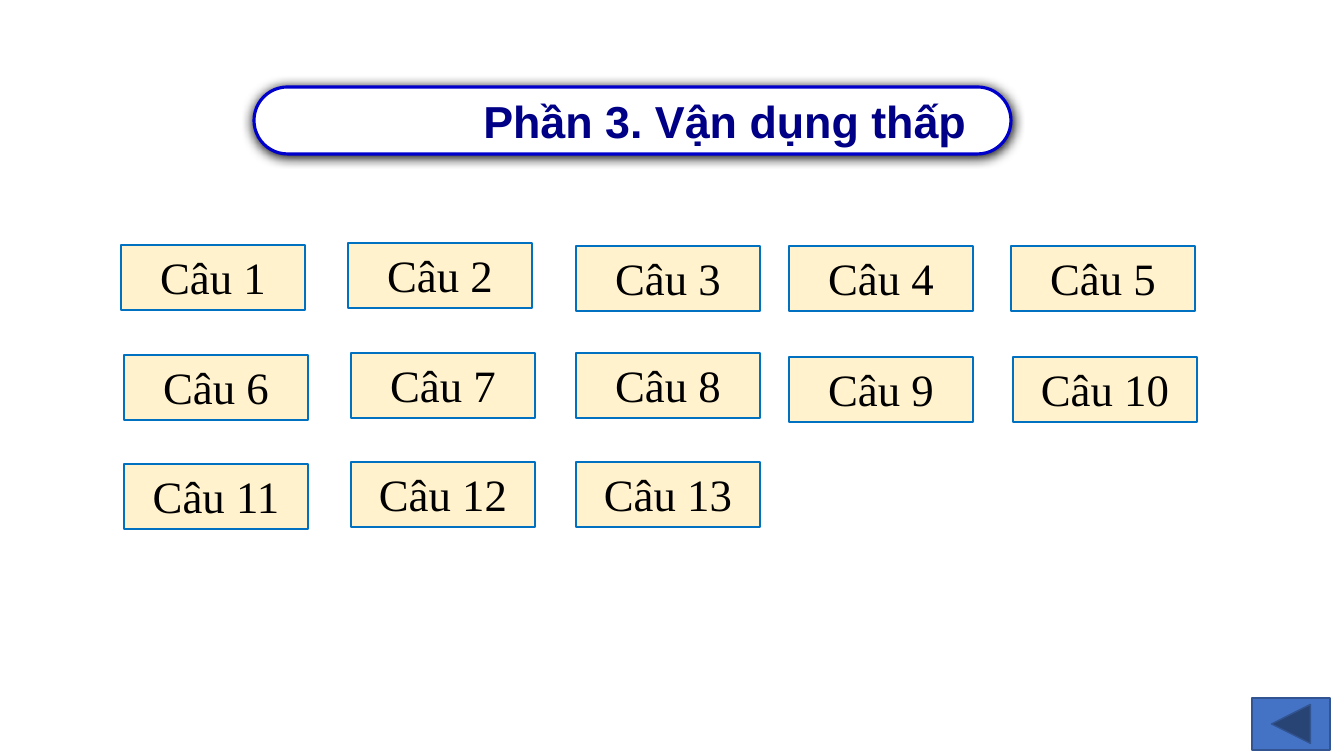
from lxml import etree
from pptx import Presentation
from pptx import util as u
from pptx.dml.color import RGBColor
from pptx.enum import shapes, text
from pptx.oxml.ns import qn

PX = 914400 / 100.8
WHITE = RGBColor(0xFF, 0xFF, 0xFF)
BLACK = RGBColor(0x00, 0x00, 0x00)
TITLE_LINE = RGBColor(0x00, 0x00, 0xCC)
TITLE_TEXT = RGBColor(0x00, 0x00, 0x86)
CREAM = RGBColor(0xFF, 0xF2, 0xCC)
BLUE = RGBColor(0x00, 0x70, 0xC0)
BUTTON_FILL = RGBColor(0x44, 0x72, 0xC4)
BUTTON_LINE = RGBColor(0x32, 0x54, 0x91)

deck = Presentation()
deck.slide_width, deck.slide_height = u.Emu(round(1344 * PX)), u.Emu(round(756 * PX))
page = deck.slides.add_slide(deck.slide_layouts[6])


def add_box(kind, place, fill, line, weight):
    box = page.shapes.add_shape(kind, *(u.Emu(round(v * PX)) for v in place))
    box.shadow.inherit = False
    box.fill.solid()
    box.fill.fore_color.rgb = fill
    box.line.color.rgb = line
    box.line.width = u.Pt(weight)
    return box


def write(box, words, font):
    para = box.text_frame.paragraphs[0]
    para.alignment = text.PP_ALIGN.CENTER
    span = para.add_run()
    span.text = words
    span.font.color.rgb = font["color"]
    for name in ("name", "size", "bold"):
        setattr(span.font, name, font[name])


# Title pill, its text pushed right by the left margin
title = add_box(shapes.MSO_SHAPE.ROUNDED_RECTANGLE, (254, 87, 757, 67), WHITE, TITLE_LINE, 2.25)
title.adjustments[0] = 0.5
title.text_frame.word_wrap = True
title.text_frame.vertical_anchor = text.MSO_ANCHOR.MIDDLE
title.text_frame.margin_left = u.Emu(round(195 * PX))
write(title, "Phần 3. Vận dụng thấp",
      {"name": "Arial", "size": u.Pt(32), "bold": True, "color": TITLE_TEXT})

# Soft shadow under the title
effects = title._element.spPr.find(qn("a:effectLst"))
shadow = etree.SubElement(effects, qn("a:outerShdw"), blurRad=str(u.Pt(8.5)),
                          dist=str(u.Pt(1)), dir="5400000", rotWithShape="0")
etree.SubElement(shadow, qn("a:srgbClr"), val="000000")

# Question boxes: left and top of each, row by row
question_rows = [
    [(121, 245), (348, 243), (576, 246), (789, 246), (1011, 246)],
    [(124, 355), (351, 353), (576, 353), (789, 357), (1013, 357)],
    [(124, 464), (351, 462), (576, 462)],
]
question_font = {"name": "Times New Roman", "size": u.Pt(32), "bold": False, "color": BLACK}
places = [place for row in question_rows for place in row]
for number, (left, top) in enumerate(places, start=1):
    question = add_box(shapes.MSO_SHAPE.RECTANGLE, (left, top, 184, 65), CREAM, BLUE, 1.5)
    question.text_frame.word_wrap = True
    question.text_frame.auto_size = text.MSO_AUTO_SIZE.SHAPE_TO_FIT_TEXT
    question.text_frame.vertical_anchor = text.MSO_ANCHOR.TOP
    write(question, f"Câu {number}", question_font)

# Back button
add_box(shapes.MSO_SHAPE.ACTION_BUTTON_BACK_OR_PREVIOUS, (1252, 698, 78, 52),
        BUTTON_FILL, BUTTON_LINE, 1)

deck.save("out.pptx")
